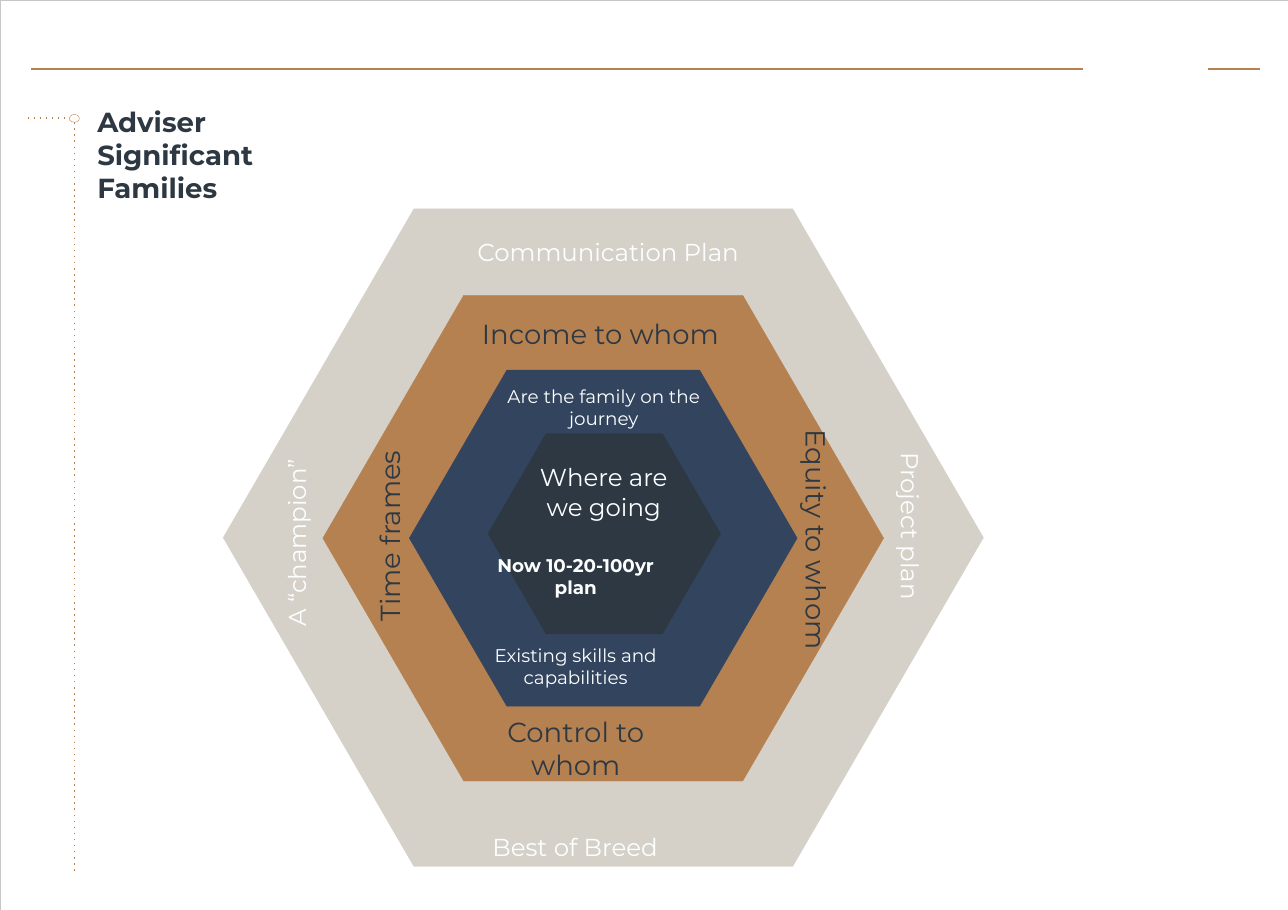
from dataclasses import dataclass

from lxml.etree import SubElement
from pptx import Presentation
from pptx.dml.color import RGBColor
from pptx.enum.shapes import MSO_CONNECTOR as Conn, MSO_SHAPE as Shape
from pptx.enum.text import MSO_ANCHOR as Anchor, MSO_AUTO_SIZE as AutoSize, PP_ALIGN as Align
from pptx.oxml.ns import qn
from pptx.util import Emu, Inches, Pt

WIDTH, HEIGHT = Inches(11.69), Inches(8.26)
FONT = "Montserrat"
LINE_HEIGHT = 1.22

COPPER = RGBColor(0xB6, 0x81, 0x50)
STONE = RGBColor(0xD5, 0xD1, 0xC9)
NAVY = RGBColor(0x33, 0x44, 0x5F)
SLATE = RGBColor(0x2D, 0x38, 0x42)
PALE = RGBColor(0xFD, 0xFF, 0xFF)
FRAME_GREY = RGBColor(0xC7, 0xC7, 0xC7)


# All positions and lengths below are percentages of the slide's size.
@dataclass(frozen=True)
class Rule:
    x1: float
    y1: float
    x2: float
    y2: float
    weight: float = 1.25
    dotted: bool = False


@dataclass(frozen=True)
class Ring:
    cx: float
    cy: float
    width: float
    height: float
    color: RGBColor


@dataclass(frozen=True)
class Label:
    lines: tuple[str, ...]
    cx: float
    cy: float
    length: float
    size: int
    color: RGBColor = PALE
    bold: bool = False
    direction: str = "horz"


RULES = (
    Rule(2.4, 7.6, 84.09, 7.6),
    Rule(93.76, 7.6, 97.86, 7.6),
    Rule(2.14, 12.95, 5.39, 12.95, weight=1, dotted=True),
    Rule(5.8, 13.44, 5.8, 95.88, weight=1, dotted=True),
)

RINGS = (
    Ring(46.84, 59.08, 59.02, 72.28, STONE),
    Ring(46.84, 59.14, 43.54, 53.39, COPPER),
    Ring(46.84, 59.14, 30.11, 36.92, NAVY),
    Ring(46.92, 58.66, 18.05, 22.03, SLATE),
)

LABELS = (
    Label(("Communication Plan",), 47.22, 27.7, 21, 16),
    Label(("Income to whom",), 46.62, 36.6, 20, 18, SLATE),
    Label(("Equity to whom",), 63.4, 59.3, 18, 18, SLATE, direction="vert"),
    Label(("Time frames",), 30.2, 58.9, 14.5, 18, SLATE, direction="vert270"),
    Label(("A “champion”",), 23, 59.65, 14, 16, direction="vert270"),
    Label(("Are the family on the", "journey"), 46.88, 44.79, 18, 12),
    Label(("Where are", "we going"), 46.88, 54.05, 14, 16),
    Label(("Now 10-20-100yr", "plan"), 44.7, 63.3, 15, 12, bold=True),
    Label(("Existing skills and", "capabilities"), 44.7, 73.25, 16, 12),
    Label(("Control to", "whom"), 44.7, 82.2, 14, 18, SLATE),
    Label(("Best of Breed",), 44.65, 93.1, 16, 16),
    Label(("Project plan",), 70.7, 57.8, 12.5, 16, direction="vert"),
)


def px(share: float) -> Emu:
    return Emu(round(WIDTH * share / 100))


def py(share: float) -> Emu:
    return Emu(round(HEIGHT * share / 100))


def write(sp, lines: tuple[str, ...], *, size: int, color: RGBColor,
          bold: bool = False, align=Align.CENTER, anchor=Anchor.MIDDLE) -> None:
    """Fill a shape with one paragraph per line, without insets."""
    tf = sp.text_frame
    tf.word_wrap = True
    tf.auto_size = AutoSize.NONE
    tf.vertical_anchor = anchor
    tf.margin_left = tf.margin_right = tf.margin_top = tf.margin_bottom = 0
    for i, line in enumerate(lines):
        p = tf.add_paragraph() if i else tf.paragraphs[0]
        p.alignment = align
        p.space_before = Pt(0)
        r = p.add_run()
        r.text = line
        r.font.name, r.font.size, r.font.bold = FONT, Pt(size), bold
        r.font.color.rgb = color


def add_outline(s, kind, box: tuple, line: RGBColor, fill: RGBColor | None = None):
    sp = s.shapes.add_shape(kind, *box)
    sp.shadow.inherit = False
    if fill is None:
        sp.fill.background()
    else:
        sp.fill.solid()
        sp.fill.fore_color.rgb = fill
    sp.line.color.rgb = line
    sp.line.width = Pt(0.25)
    return sp


def add_rule(s, rule: Rule) -> None:
    cxn = s.shapes.add_connector(Conn.STRAIGHT, px(rule.x1), py(rule.y1),
                                 px(rule.x2), py(rule.y2))
    cxn.line.color.rgb = COPPER
    cxn.line.width = Pt(rule.weight)
    props = cxn.element.spPr
    if rule.dotted:
        SubElement(props.find(qn("a:ln")), qn("a:prstDash")).set("val", "dot")
    SubElement(props, qn("a:effectLst"))


def add_ring(s, ring: Ring) -> None:
    box = (px(ring.cx - ring.width / 2), py(ring.cy - ring.height / 2),
           px(ring.width), py(ring.height))
    sp = add_outline(s, Shape.HEXAGON, box, ring.color, ring.color)
    sp.adjustments[0] = 0.29


def add_label(s, label: Label) -> None:
    """Centre a text box on the label's point, turned if it reads vertically."""
    w, h = px(label.length), Pt(label.size * LINE_HEIGHT * len(label.lines))
    if label.direction != "horz":
        w, h = h, w
    sp = s.shapes.add_textbox(px(label.cx) - w // 2, py(label.cy) - h // 2, w, h)
    write(sp, label.lines, size=label.size, color=label.color, bold=label.bold)
    sp.element.txBody.bodyPr.set("vert", label.direction)


def main() -> None:
    prs = Presentation()
    prs.slide_width, prs.slide_height = WIDTH, HEIGHT
    s = prs.slides.add_slide(prs.slide_layouts[5])

    title = s.shapes.title
    title.left, title.top, title.width, title.height = px(7.55), py(11.5), px(21.9), py(11.2)
    write(title, ("Adviser", "Significant", "Families"), size=18, color=SLATE,
          bold=True, align=Align.LEFT, anchor=Anchor.TOP)

    add_outline(s, Shape.RECTANGLE, (0, 0, WIDTH, HEIGHT), FRAME_GREY)
    for rule in RULES:
        add_rule(s, rule)
    add_outline(s, Shape.OVAL, (px(5.39), py(12.59), px(0.77), py(0.85)), COPPER)

    for ring in RINGS:
        add_ring(s, ring)
    for label in LABELS:
        add_label(s, label)
    prs.save("out.pptx")


if __name__ == "__main__":
    main()
